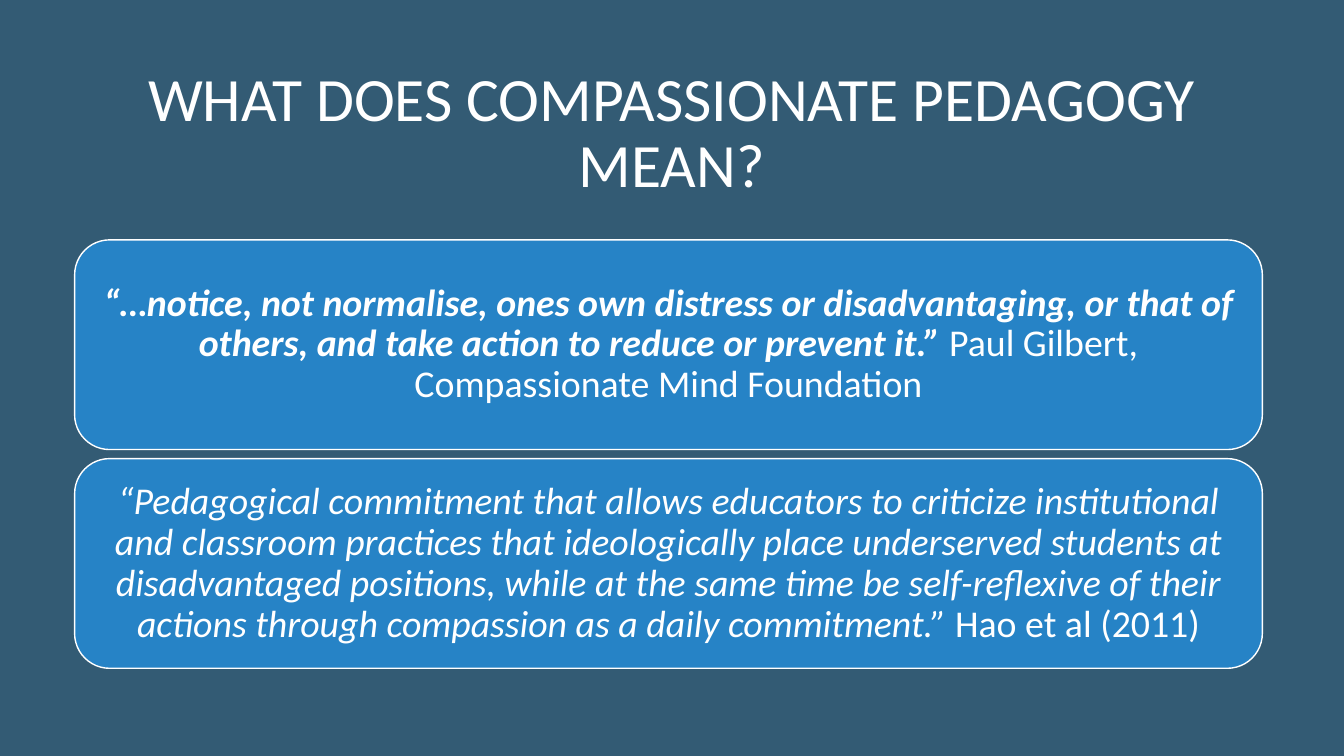
from pptx import Presentation
from pptx.dml.color import RGBColor
from pptx.enum.shapes import MSO_SHAPE
from pptx.enum.text import MSO_ANCHOR, PP_ALIGN
from pptx.util import Inches, Pt

ROUNDED = MSO_SHAPE.ROUNDED_RECTANGLE
MIDDLE = MSO_ANCHOR.MIDDLE
CENTER = PP_ALIGN.CENTER

THEME = {
    "background": RGBColor(0x33, 0x5B, 0x74),
    "card": RGBColor(0x26, 0x83, 0xC6),
    "text": RGBColor(0xFF, 0xFF, 0xFF),
    "font": "Calibri",
    "title_size": Pt(44),
    "quote_size": Pt(27),
}

# Each quote: words, bold, source
QUOTES = [
    ("“…notice, not normalise, ones own distress or disadvantaging, or that of "
     "others, and take action to reduce or prevent it.” ",
     True, "Paul Gilbert, Compassionate Mind Foundation"),
    ("“Pedagogical commitment that allows educators to criticize institutional "
     "and classroom practices that ideologically place underserved students at "
     "disadvantaged positions, while at the same time be self-reflexive of their "
     "actions through compassion as a daily commitment.” ",
     False, "Hao et al (2011)"),
]

# Card column
CARD_LEFT, CARD_TOP = Inches(0.74), Inches(2.38)
CARD_WIDTH, CARD_HEIGHT = Inches(11.78), Inches(2.08)
CARD_GAP = Inches(0.09)
CARD_INSET = Inches(0.11)


def style_paragraph(p, size):
    p.alignment = CENTER
    p.line_spacing = 0.9
    p.font.name = THEME["font"]
    p.font.size = size
    p.font.color.rgb = THEME["text"]


prs = Presentation()
prs.slide_width, prs.slide_height = Inches(13.33), Inches(7.5)
s = prs.slides.add_slide(prs.slide_layouts[6])
s.background.fill.solid()
s.background.fill.fore_color.rgb = THEME["background"]

# Title
sp = s.shapes.add_textbox(Inches(1.25), Inches(0.58), Inches(10.83), Inches(1.51))
tf = sp.text_frame
tf.word_wrap = True
tf.vertical_anchor = MIDDLE
p = tf.paragraphs[0]
p.text = "WHAT DOES COMPASSIONATE PEDAGOGY MEAN?"
style_paragraph(p, THEME["title_size"])

# Quote cards
for row, (quote, bold, source) in enumerate(QUOTES):
    top = CARD_TOP + row * (CARD_HEIGHT + CARD_GAP)
    sp = s.shapes.add_shape(ROUNDED, CARD_LEFT, top, CARD_WIDTH, CARD_HEIGHT)
    sp.shadow.inherit = False
    sp.fill.solid()
    sp.fill.fore_color.rgb = THEME["card"]
    sp.line.color.rgb = THEME["text"]
    sp.line.width = Pt(1)

    tf = sp.text_frame
    tf.word_wrap = True
    tf.vertical_anchor = MIDDLE
    tf.margin_left = tf.margin_right = CARD_INSET
    tf.margin_top = tf.margin_bottom = CARD_INSET
    p = tf.paragraphs[0]
    style_paragraph(p, THEME["quote_size"])
    for text, is_bold, is_italic in ((quote, bold, True), (source, False, False)):
        r = p.add_run()
        r.text = text
        # Runs in a shape take their colour from the shape style unless set here
        r.font.name = THEME["font"]
        r.font.size = THEME["quote_size"]
        r.font.color.rgb = THEME["text"]
        r.font.bold = is_bold
        r.font.italic = is_italic

prs.save("out.pptx")
